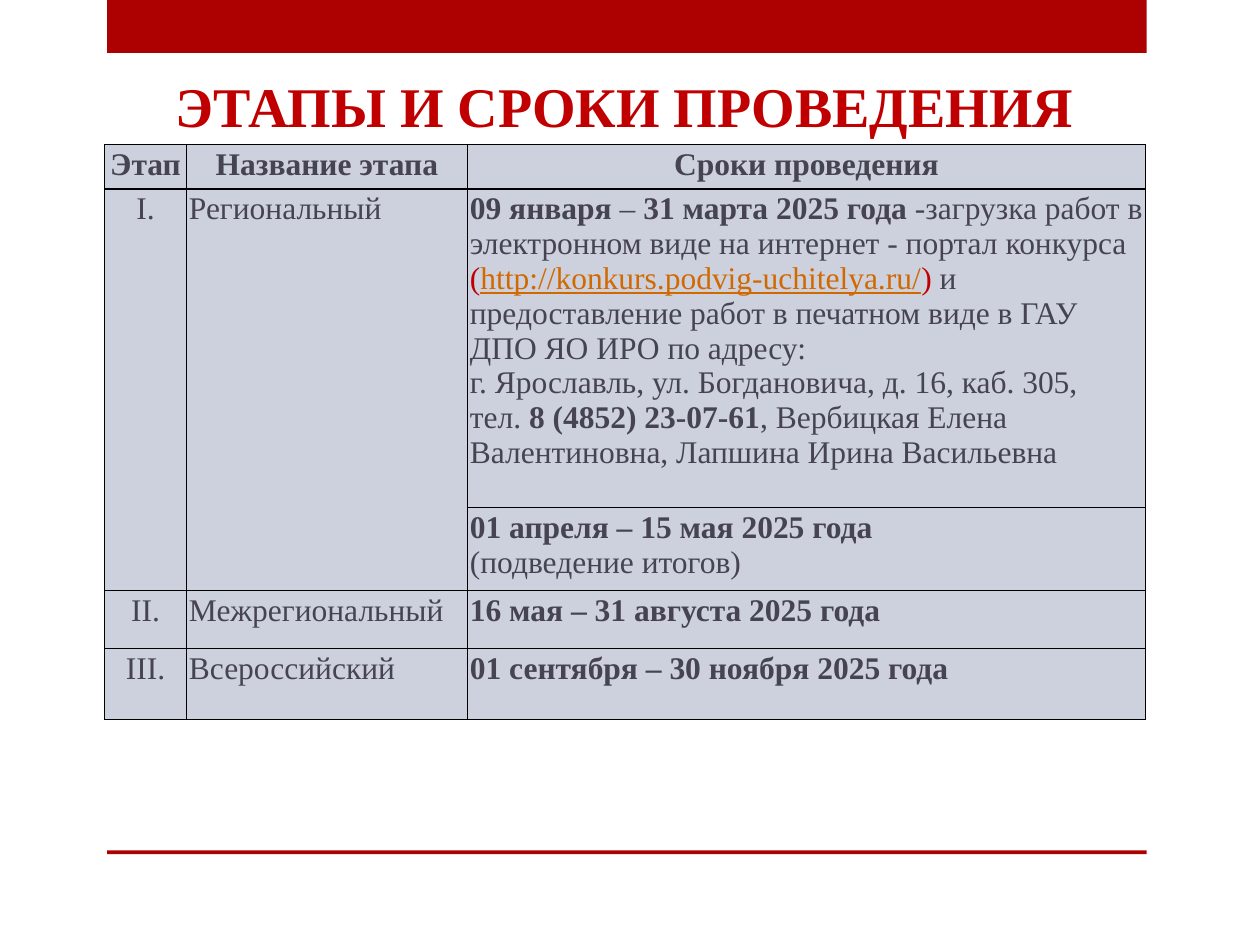
import pptx
import pptx.util
import pptx.dml.color
import pptx.enum.shapes
import pptx.enum.text
import pptx.oxml
import pptx.oxml.ns

Inches = pptx.util.Inches
Pt = pptx.util.Pt
RGBColor = pptx.dml.color.RGBColor
ALIGN = pptx.enum.text.PP_ALIGN
ANCHOR = pptx.enum.text.MSO_ANCHOR

BAR = RGBColor(0xAD, 0x01, 0x01)
RED = RGBColor(0xC0, 0x00, 0x00)
INK = RGBColor(0x46, 0x44, 0x51)
LINK = RGBColor(0xD2, 0x69, 0x00)
CELL = RGBColor(0xCC, 0xD1, 0xDD)

BOLD = {"bold": True}

# Each cell is a list of paragraphs, each paragraph a list of (text, format)
HEAD = [[[(name, BOLD)]] for name in ("Этап", "Название этапа", "Сроки проведения")]
UPLOAD = [
    [
        ("09 января", BOLD),
        (" – ", {}),
        ("31 марта 2025 года", BOLD),
        (" -загрузка работ в электронном виде на интернет - портал конкурса ", {}),
        ("(", {"color": RED}),
        ("http://konkurs.podvig-uchitelya.ru/", {"color": LINK, "line": True}),
        (") ", {"color": RED}),
        ("и предоставление работ в печатном виде в ГАУ ДПО ЯО ИРО по адресу:", {}),
    ],
    [("г. Ярославль, ул. Богдановича, д. 16, каб. 305,", {})],
    [
        ("тел. ", {}),
        ("8 (4852) 23-07-61", BOLD),
        (", Вербицкая Елена Валентиновна, Лапшина Ирина Васильевна", {}),
    ],
]
RESULTS = [[("01 апреля – 15 мая 2025 года", BOLD)], [("(подведение итогов)", {})]]
ROWS = [
    HEAD,
    [[[("I.", {})]], [[("Региональный", {})]], UPLOAD],
    [None, None, RESULTS],
    [[[("II.", {})]], [[("Межрегиональный", {})]],
     [[("16 мая – 31 августа 2025 года", BOLD)]]],
    [[[("III.", {})]], [[("Всероссийский", {})]],
     [[("01 сентября – 30 ноября 2025 года", BOLD)]]],
]


def write(para, text, size=18, color=INK, bold=False, line=False):
    run = para.add_run()
    run.text = text
    font = run.font
    font.name = "Times New Roman"
    font.size = Pt(size)
    font.color.rgb = color
    font.bold = bold
    font.underline = line


class Deck:
    def __init__(self):
        self.prs = pptx.Presentation()
        self.prs.slide_width = Inches(10)
        self.prs.slide_height = Inches(7.5)
        self.slide = self.prs.slides.add_slide(self.prs.slide_layouts[5])

    def bar(self, top, height):
        shape = self.slide.shapes.add_shape(
            pptx.enum.shapes.MSO_SHAPE.RECTANGLE,
            Inches(0.85), Inches(top), Inches(8.25), Inches(height))
        shape.shadow.inherit = False
        shape.fill.solid()
        shape.fill.fore_color.rgb = BAR
        shape.line.fill.background()

    def title(self, text):
        box = self.slide.shapes.title
        box.left, box.top = Inches(0.83), Inches(0.36)
        box.width, box.height = Inches(8.26), Inches(0.79)
        frame = box.text_frame
        frame.word_wrap = True
        frame.auto_size = pptx.enum.text.MSO_AUTO_SIZE.NONE
        frame.vertical_anchor = ANCHOR.BOTTOM
        para = frame.paragraphs[0]
        para.alignment = ALIGN.CENTER
        write(para, text, size=32, color=RED, bold=True)

    def border(self, cell):
        props = cell._tc.get_or_add_tcPr()
        for side in ("lnL", "lnR", "lnT", "lnB"):
            props.append(pptx.oxml.parse_xml(
                f'<a:{side} {pptx.oxml.ns.nsdecls("a")} w="{Pt(0.75)}">'
                '<a:solidFill><a:srgbClr val="000000"/></a:solidFill>'
                f'</a:{side}>'))

    def cell(self, cell, paras, align):
        self.border(cell)
        cell.fill.solid()
        cell.fill.fore_color.rgb = CELL
        cell.margin_left = cell.margin_right = Inches(0.02)
        cell.margin_top = cell.margin_bottom = Inches(0.02)
        frame = cell.text_frame
        for i, runs in enumerate(paras or []):
            para = frame.add_paragraph() if i else frame.paragraphs[0]
            para.alignment = align
            for text, form in runs:
                write(para, text, **form)

    def table(self, rows, widths, heights):
        table = self.slide.shapes.add_table(
            len(rows), len(widths), Inches(0.83), Inches(1.15),
            Inches(sum(widths)), Inches(sum(heights))).table
        for col, width in zip(table.columns, widths):
            col.width = Inches(width)
        for row, height in zip(table.rows, heights):
            row.height = Inches(height)
        for r, row in enumerate(rows):
            for c, paras in enumerate(row):
                center = r == 0 or c == 0
                self.cell(table.cell(r, c), paras,
                          ALIGN.CENTER if center else ALIGN.LEFT)
        # The regional stage covers two rows of dates
        for c in (0, 1):
            table.cell(1, c).merge(table.cell(2, c))


def main():
    deck = Deck()
    # Red bands at top and bottom
    deck.bar(0, 0.42)
    deck.bar(6.75, 0.03)
    # Heading and schedule
    deck.title("ЭТАПЫ И СРОКИ ПРОВЕДЕНИЯ")
    deck.table(ROWS, [0.65, 2.23, 5.38], [0.35, 2.53, 0.66, 0.46, 0.56])
    deck.prs.save("out.pptx")


if __name__ == "__main__":
    main()
